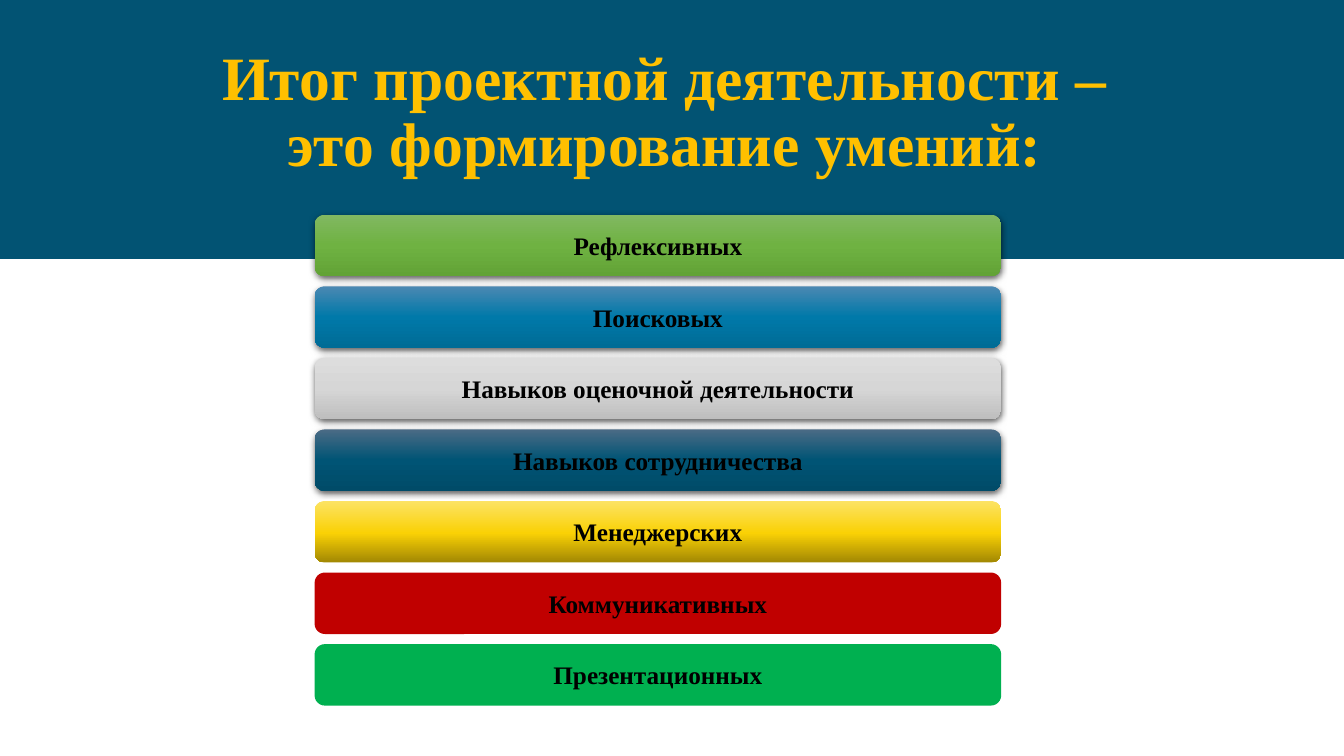
from copy import deepcopy

from pptx import Presentation
from pptx.dml.color import RGBColor
from pptx.enum.shapes import MSO_SHAPE
from pptx.enum.text import MSO_ANCHOR, MSO_AUTO_SIZE, PP_ALIGN
from pptx.oxml import parse_xml
from pptx.oxml.ns import nsdecls, qn
from pptx.util import Inches, Pt

RECTANGLE, ROUNDED = MSO_SHAPE.RECTANGLE, MSO_SHAPE.ROUNDED_RECTANGLE
MIDDLE, CENTER = MSO_ANCHOR.MIDDLE, PP_ALIGN.CENTER
NO_AUTOFIT = MSO_AUTO_SIZE.NONE
TITLE_ONLY = 5

THEME = {
    "font": "Times New Roman",
    "title_size": 44,
    "bar_size": 18,
    "band": "025373",
    "title": "FFC000",
    "bar_text": "000000",
}
# Label, fill colours from top to bottom, position of the middle colour, shadow
SKILLS = [
    ("Рефлексивных", ["81B861", "6FB242", "62A336"], 0.5, True),
    ("Поисковых", ["4B88B2", "0079A9", "006C96"], 0.5, True),
    ("Навыков оценочной деятельности", ["DDDDDD", "D6D6D6", "BEBEBE"], 0.5, True),
    ("Навыков сотрудничества", ["4B6B85", "005475", "004B68"], 0.5, True),
    ("Менеджерских", ["FCE364", "FAD105", "A28803"], 0.52, False),
    ("Коммуникативных", ["C00000"], None, False),
    ("Презентационных", ["00B050"], None, False),
]
SHADOW = (
    f'<a:outerShdw {nsdecls("a")} blurRad="{Pt(4.5)}" dist="{Pt(1.5)}" '
    'dir="5400000" algn="ctr" rotWithShape="0">'
    '<a:srgbClr val="000000"><a:alpha val="63000"/></a:srgbClr></a:outerShdw>'
)


def write_text(shape, text, size, color, line_spacing=1.0):
    frame = shape.text_frame
    frame.text = text
    frame.word_wrap = True
    frame.auto_size = NO_AUTOFIT
    frame.vertical_anchor = MIDDLE
    para = frame.paragraphs[0]
    para.alignment = CENTER
    para.line_spacing = line_spacing
    for span in para.runs:
        span.font.name = THEME["font"]
        span.font.size = Pt(size)
        span.font.bold = True
        span.font.color.rgb = RGBColor.from_string(color)


def paint(shape, colors, middle=None):
    """Fill with one colour, or with three running from top to bottom."""
    shape.shadow.inherit = False
    shape.line.fill.background()
    if len(colors) == 1:
        shape.fill.solid()
        shape.fill.fore_color.rgb = RGBColor.from_string(colors[0])
        return
    shape.fill.gradient()
    shape.fill.gradient_angle = 270
    first_stop = next(shape._element.spPr.iter(qn("a:gs")))
    first_stop.addnext(deepcopy(first_stop))
    for stop, color, position in zip(shape.fill.gradient_stops, colors, (0, middle, 1)):
        stop.color.rgb = RGBColor.from_string(color)
        stop.position = position


deck = Presentation()
deck.slide_width, deck.slide_height = Inches(13.33), Inches(7.5)
width, height = deck.slide_width, deck.slide_height
page = deck.slides.add_slide(deck.slide_layouts[TITLE_ONLY])

band = page.shapes.add_shape(RECTANGLE, 0, 0, width, Inches(2.57))
paint(band, [THEME["band"]])

title = page.shapes.title
title.left, title.top = Inches(0.92), Inches(0.4)
title.width, title.height = Inches(11.5), Inches(1.45)
write_text(title, "Итог проектной деятельности – \vэто формирование умений: ",
           THEME["title_size"], THEME["title"], line_spacing=0.9)
band._element.addnext(title._element)

bar_left, bar_top = Inches(3.12), Inches(2.13)
bar_width, bar_height = Inches(6.81), Inches(0.61)
bar_step = Inches(0.71)
for row, (label, colors, middle, shadowed) in enumerate(SKILLS):
    bar = page.shapes.add_shape(ROUNDED, bar_left, bar_top + row * bar_step,
                                bar_width, bar_height)
    paint(bar, colors, middle)
    if shadowed:
        bar._element.spPr.find(qn("a:effectLst")).append(parse_xml(SHADOW))
    write_text(bar, label, THEME["bar_size"], THEME["bar_text"])

deck.save("out.pptx")
